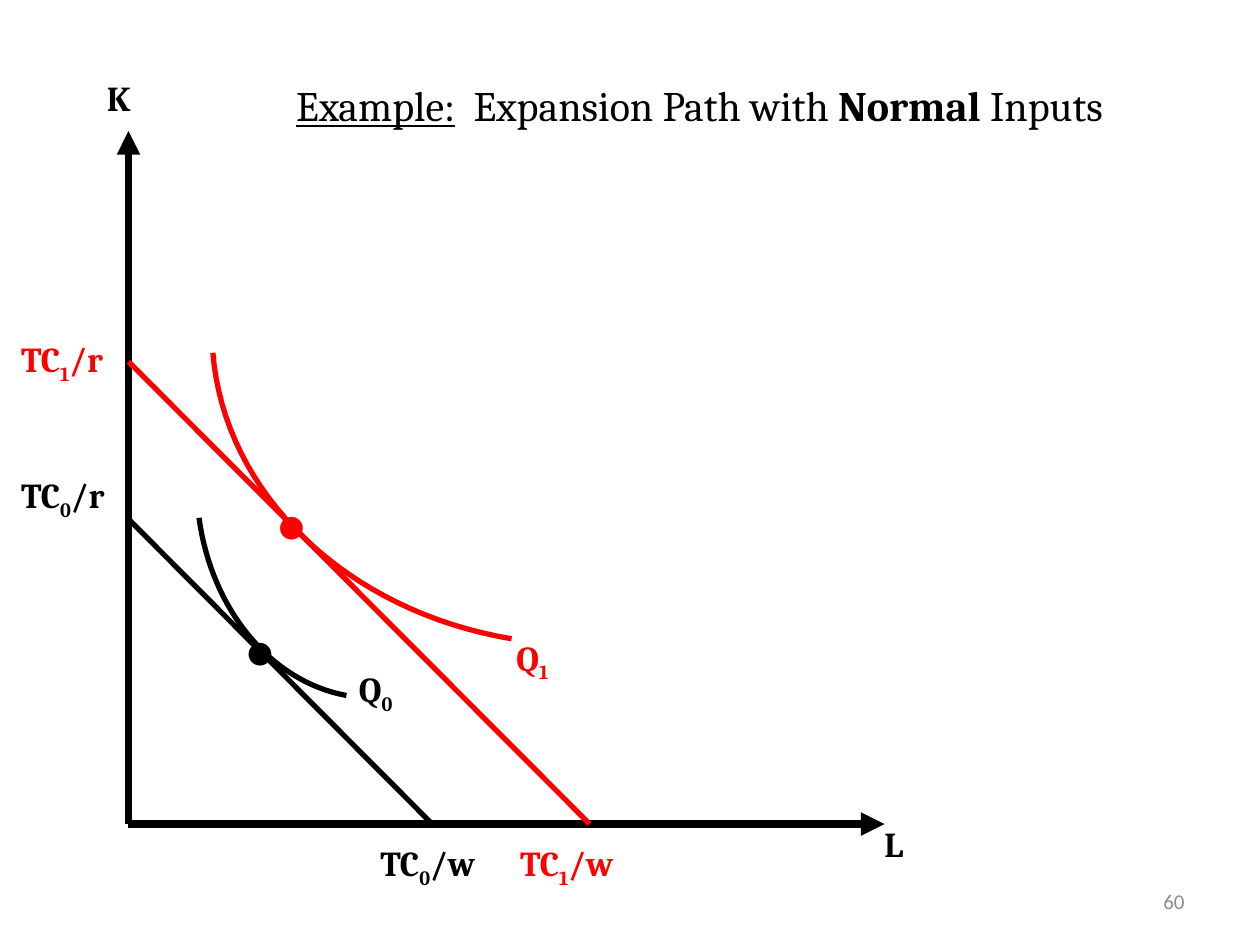
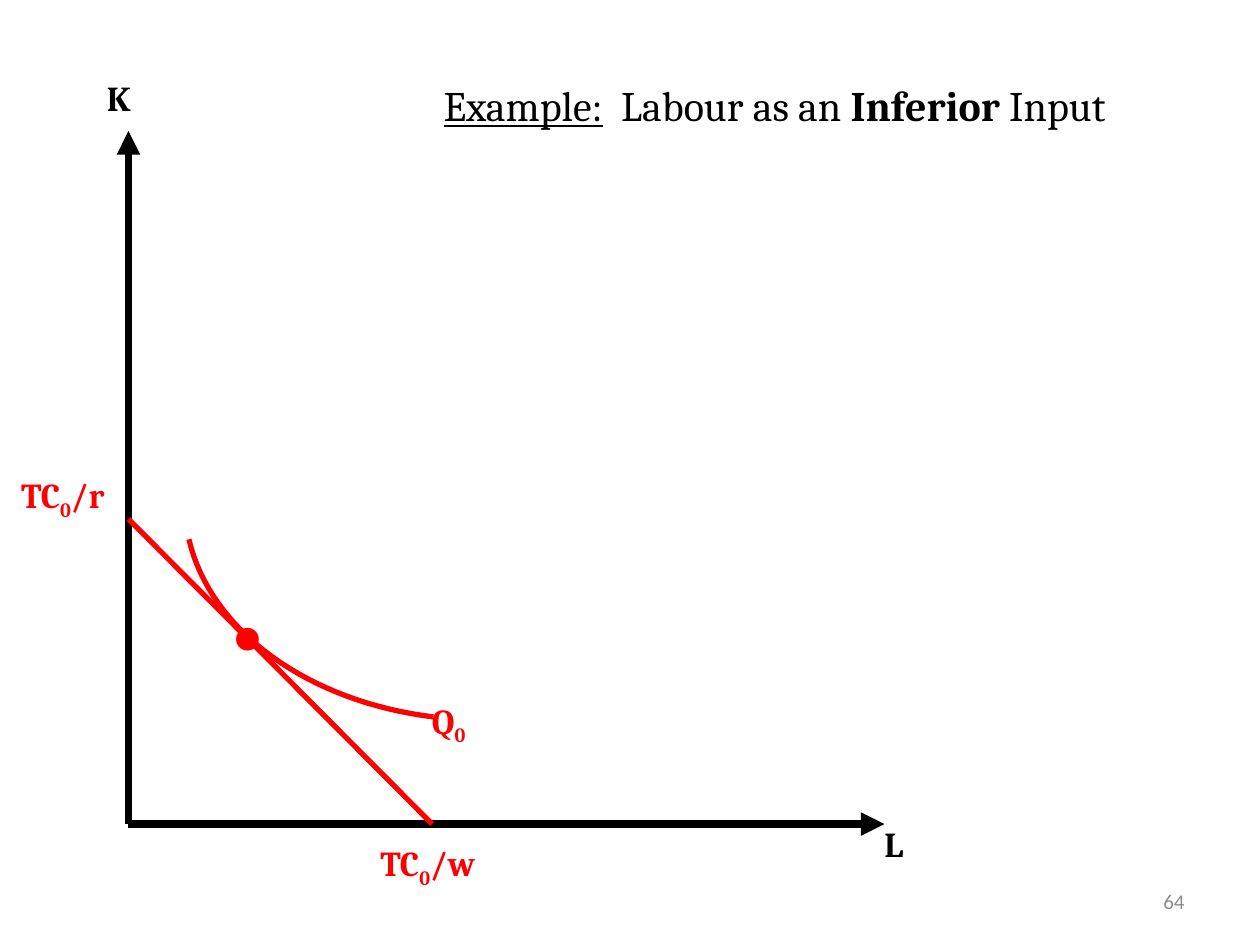
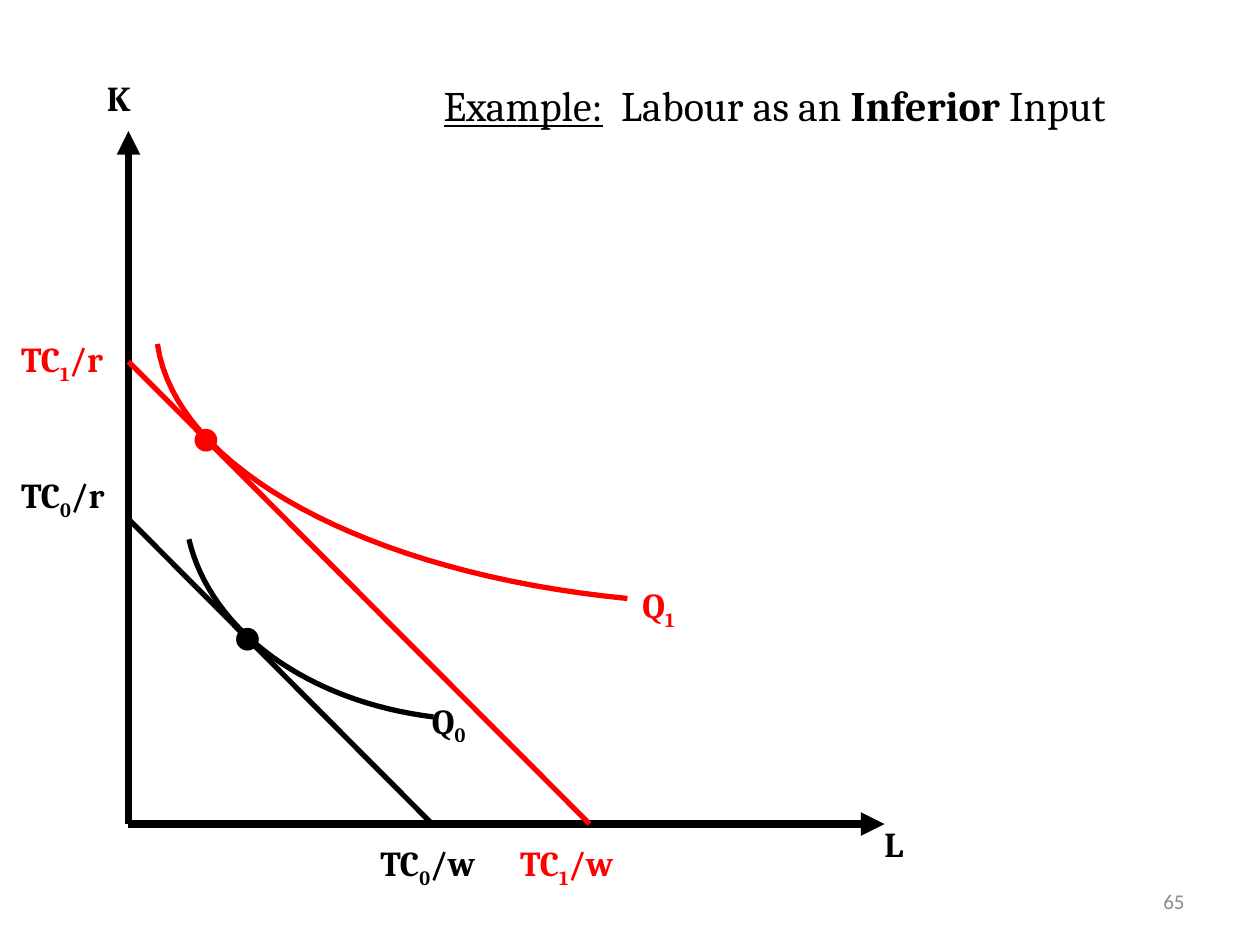
"""Build three slides on expansion paths with normal and inferior inputs."""
from dataclasses import dataclass
from typing import Any, NamedTuple

from lxml.etree import SubElement
from pptx import Presentation
from pptx.dml.color import RGBColor
from pptx.enum.shapes import MSO_CONNECTOR
from pptx.enum.text import MSO_ANCHOR, MSO_AUTO_SIZE, PP_ALIGN
from pptx.oxml.ns import qn
from pptx.slide import Slide
from pptx.text.text import TextFrame
from pptx.util import Emu, Pt

EMU_PER_PX = 9144
BLACK, RED, GREY = "000000", "FF0000", "8C8C8C"
TITLE_FORMAT = {"name": "Cambria", "size": Pt(24), "bold": False}
LABEL_FORMAT = {"name": "Cambria", "size": Pt(20), "bold": True}
DOT_FORMAT = {"name": "Times New Roman", "size": Pt(48), "bold": True}
NUMBER_FORMAT = {"name": "Calibri", "size": Pt(12)}
LABEL_FRAME = {"word_wrap": False, "auto_size": MSO_AUTO_SIZE.SHAPE_TO_FIT_TEXT}
TITLE_FRAME = {"word_wrap": True, "auto_size": MSO_AUTO_SIZE.NONE,
               "vertical_anchor": MSO_ANCHOR.TOP}
NUMBER_FRAME = {"word_wrap": True, "vertical_anchor": MSO_ANCHOR.MIDDLE}
SUBSCRIPT = {"baseline": "-25000"}
WIDE_SPACE = {"spc": "530"}
LABEL_HEIGHT = 43
TITLE_RIGHT = 942
CURVE_STEPS = 32


class Point(NamedTuple):
    """A place on the slide in px."""
    x: int
    y: int


class Box(NamedTuple):
    """A frame on the slide in px."""
    left: int
    top: int
    width: int
    height: int


class Span(NamedTuple):
    """A piece of text with its own font values and run attributes."""
    text: str
    font: dict[str, Any] = {}
    attributes: dict[str, str] = {}


@dataclass(frozen=True)
class CostLevel:
    """An isocost line with its intercepts and the places of their labels."""
    subscript: str
    capital: int
    labour: int
    capital_label_top: int
    labour_label_left: int


@dataclass(frozen=True)
class Choice:
    """A tangency of an isoquant with an isocost line."""
    cost: CostLevel
    isoquant: tuple[Point, Point, Point, Point]
    dot: Point
    label: Point


@dataclass(frozen=True)
class Page:
    """A diagram slide, whose last choice is highlighted."""
    number: str
    title_left: int
    title: tuple[str, str, str]
    choices: list[Choice]


ORIGIN, CAPITAL_END, LABOUR_END = Point(102, 654), Point(102, 104), Point(702, 654)
COST_0 = CostLevel("0", 412, 343, 371, 292)
COST_1 = CostLevel("1", 287, 468, 263, 403)
NORMAL_0 = Choice(COST_0, (Point(275, 552), Point(215, 541), Point(168, 484), Point(158, 411)),
                  Point(185, 470), Point(275, 525))
NORMAL_1 = Choice(COST_1, (Point(406, 507), Point(275, 485), Point(178, 392), Point(169, 280)),
                  Point(210, 370), Point(400, 500))
INFERIOR_0 = Choice(COST_0, (Point(344, 569), Point(245, 557), Point(167, 501), Point(150, 428)),
                    Point(175, 458), Point(333, 550))
INFERIOR_1 = Choice(COST_1, (Point(498, 475), Point(292, 455), Point(139, 372), Point(125, 273)),
                    Point(142, 300), Point(500, 458))
INFERIOR_TITLE = ("Labour as an ", "Inferior", " Input")
PAGES = [
    Page("60", 225, ("Expansion Path with ", "Normal", " Inputs"), [NORMAL_0, NORMAL_1]),
    Page("64", 342, INFERIOR_TITLE, [INFERIOR_0]),
    Page("65", 342, INFERIOR_TITLE, [INFERIOR_0, INFERIOR_1]),
]


def px(value: float) -> Emu:
    """Turn px into EMU."""
    return Emu(round(value * EMU_PER_PX))


def rgb(color: str) -> RGBColor:
    """Turn a hex string into a colour."""
    return RGBColor.from_string(color)


def set_values(target: Any, values: dict[str, Any]) -> None:
    """Set each attribute named in the values."""
    for name, value in values.items():
        setattr(target, name, value)


def write(frame: TextFrame, spans: list[Span], font: dict[str, Any], color: str,
          align: PP_ALIGN = PP_ALIGN.LEFT) -> None:
    """Write one paragraph of spans."""
    para = frame.paragraphs[0]
    para.alignment = align
    for span in spans:
        run = para.add_run()
        run.text = span.text
        set_values(run.font, font | span.font)
        run.font.color.rgb = rgb(color)
        for name, value in span.attributes.items():
            run.font._element.set(name, value)


def add_text(slide: Slide, box: Box, spans: list[Span], font: dict[str, Any] = LABEL_FORMAT,
             color: str = BLACK, frame_format: dict[str, Any] = LABEL_FRAME,
             align: PP_ALIGN = PP_ALIGN.LEFT) -> None:
    """Add a text box."""
    frame = slide.shapes.add_textbox(*map(px, box)).text_frame
    set_values(frame, frame_format)
    write(frame, spans, font, color, align)


def add_label(slide: Slide, place: Point, width: int, name: str, color: str = BLACK,
              subscript: str = "", ending: str = "") -> None:
    """Add a bold label with an optional subscript and ending."""
    spans = [Span(name), Span(subscript, {}, SUBSCRIPT), Span(ending)]
    add_text(slide, Box(*place, width, LABEL_HEIGHT), [span for span in spans if span.text],
             color=color)


def add_line(slide: Slide, start: Point, end: Point, color: str, width: float,
             arrow: bool = False) -> None:
    """Add a straight line with an optional arrowhead."""
    connector = slide.shapes.add_connector(MSO_CONNECTOR.STRAIGHT, *map(px, start + end))
    connector.line.color.rgb = rgb(color)
    connector.line.width = Pt(width)
    properties = connector._element.spPr
    if arrow:
        SubElement(properties.find(qn("a:ln")), qn("a:tailEnd"), type="triangle")
    SubElement(properties, qn("a:effectLst"))


def curve_point(controls: tuple[Point, ...], t: float) -> tuple[Emu, Emu]:
    """Find a point of a cubic curve."""
    weights = ((1 - t) ** 3, 3 * t * (1 - t) ** 2, 3 * t ** 2 * (1 - t), t ** 3)
    return (px(sum(weight * point.x for weight, point in zip(weights, controls))),
            px(sum(weight * point.y for weight, point in zip(weights, controls))))


def add_curve(slide: Slide, controls: tuple[Point, ...], color: str) -> None:
    """Add an open curve."""
    points = [curve_point(controls, step / CURVE_STEPS) for step in range(CURVE_STEPS + 1)]
    builder = slide.shapes.build_freeform(*points[0])
    builder.add_line_segments(points[1:], close=False)
    curve = builder.convert_to_shape()
    curve.shadow.inherit = False
    curve.fill.background()
    curve.line.color.rgb = rgb(color)
    curve.line.width = Pt(3)


def add_title(slide: Slide, page: Page) -> None:
    """Fill and place the title."""
    lead, stress, rest = page.title
    title = slide.shapes.title
    box = Box(page.title_left, 58, TITLE_RIGHT - page.title_left, 50)
    set_values(title, dict(zip(Box._fields, map(px, box))))
    set_values(title.text_frame, TITLE_FRAME)
    spans = [Span("Example:", {"underline": True}), Span(" ", {}, WIDE_SPACE),
             Span(lead), Span(stress, {"bold": True}), Span(rest)]
    write(title.text_frame, spans, TITLE_FORMAT, BLACK)


def add_axes(slide: Slide) -> None:
    """Add the labour and capital axes."""
    for end in (LABOUR_END, CAPITAL_END):
        add_line(slide, ORIGIN, end, BLACK, 4.5, arrow=True)
    add_label(slide, Point(692, 648), 37, "L")
    add_label(slide, Point(75, 56), 42, "K")


def add_choice(slide: Slide, choice: Choice, color: str) -> None:
    """Add an isocost line, its isoquant and their tangency."""
    cost = choice.cost
    add_line(slide, Point(ORIGIN.x, cost.capital), Point(cost.labour, ORIGIN.y), color, 3)
    add_label(slide, Point(7, cost.capital_label_top), 87, "TC", color, cost.subscript, "/r")
    add_label(slide, Point(cost.labour_label_left, 663), 99, "TC", color, cost.subscript, "/w")
    add_curve(slide, choice.isoquant, color)
    add_label(slide, choice.label, 52, "Q", color, cost.subscript)
    add_text(slide, Box(*choice.dot, 43, 90), [Span("•")], DOT_FORMAT, color)


def add_page(deck: Any, page: Page) -> None:
    """Add one diagram slide."""
    slide = deck.slides.add_slide(deck.slide_layouts.get_by_name("Title Only"))
    add_title(slide, page)
    add_text(slide, Box(717, 695, 233, 40), [Span(page.number)], NUMBER_FORMAT, GREY,
             NUMBER_FRAME, PP_ALIGN.RIGHT)
    add_axes(slide)
    for choice in page.choices:
        add_choice(slide, choice, RED if choice is page.choices[-1] else BLACK)


def main() -> None:
    """Build and save the deck."""
    deck = Presentation()
    deck.slide_width, deck.slide_height = px(1000), px(750)
    for page in PAGES:
        add_page(deck, page)
    deck.save("out.pptx")


if __name__ == "__main__":
    main()
